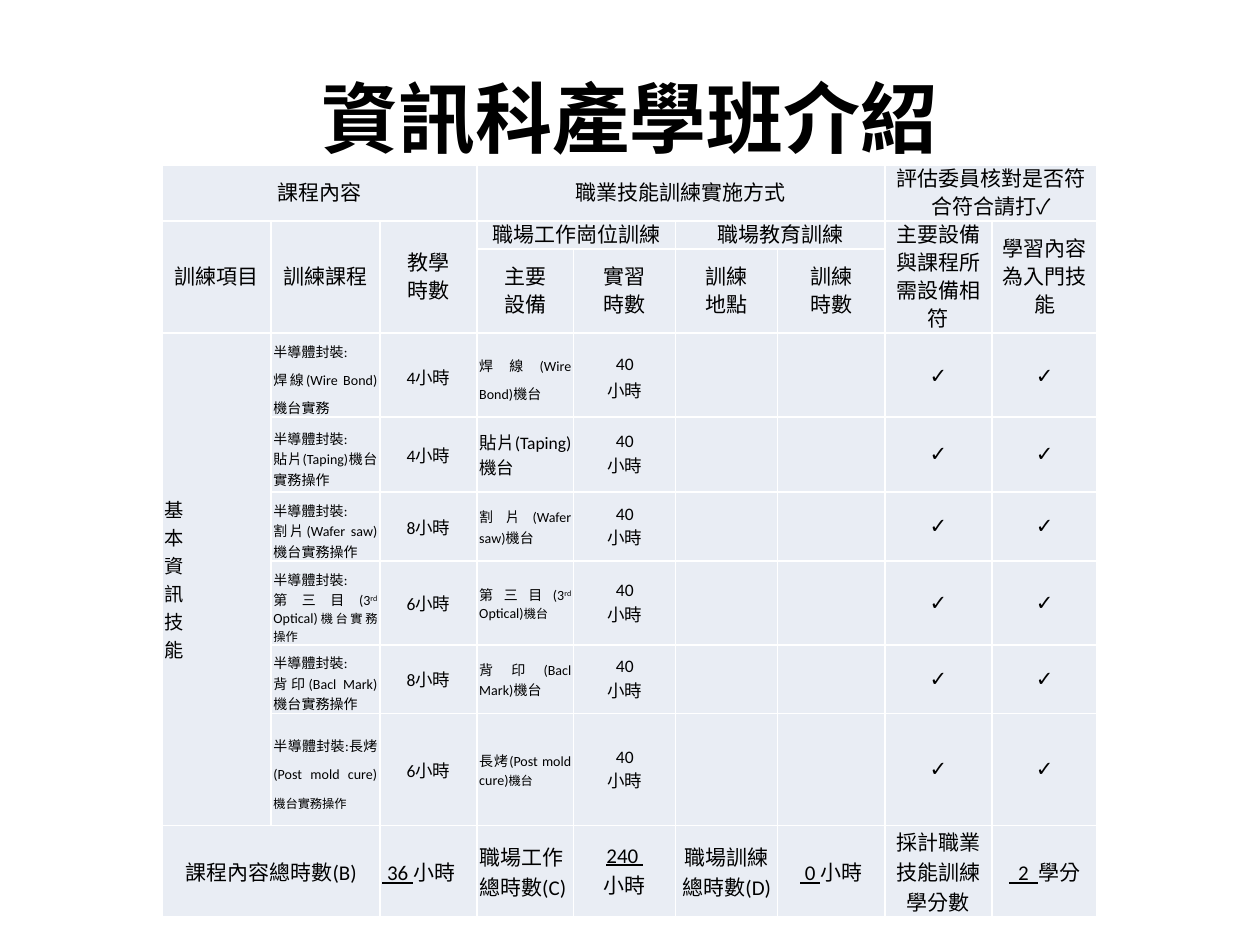
from dataclasses import dataclass
from typing import Optional

from lxml import etree
from pptx import Presentation
from pptx.dml.color import RGBColor
from pptx.enum.text import MSO_ANCHOR, PP_ALIGN
from pptx.oxml.ns import qn
from pptx.util import Pt

CENTER, LEFT, JUSTIFY = PP_ALIGN.CENTER, PP_ALIGN.LEFT, PP_ALIGN.JUSTIFY
MIDDLE = MSO_ANCHOR.MIDDLE
FONT = "Calibri"
BLACK, WHITE, PALE = "000000", "FFFFFF", "E9EDF4"
LEADING = 16
COLUMN_WIDTHS = [62, 62.2, 55.4, 55.4, 58.3, 58.3, 61.2, 61.2, 60.2]
ROW_HEIGHTS = [31.4, 16, 48, 48, 43, 39.4, 47.8, 39.4, 64, 52]
FIRST_COURSE_ROW = 3
TOTAL_ROW = 9


@dataclass
class Span:
    text: str
    size: float = 12
    bold: bool = False
    underline: bool = False
    raised: bool = False


@dataclass
class Line:
    spans: list[Span]
    align: PP_ALIGN = CENTER
    leading: Optional[float] = None


@dataclass
class Header:
    row: int
    column: int
    texts: list[str]
    rows: int = 1
    columns: int = 1


@dataclass
class Course:
    titles: list[list[Span]]
    hours: int
    equipment: list[Span]
    leading: Optional[float] = None


HEADERS = [
    Header(0, 0, ["課程內容"], columns=3),
    Header(0, 3, ["職業技能訓練實施方式"], columns=4),
    Header(0, 7, ["評估委員核對是否符合符合請打✓"], columns=2),
    Header(1, 0, ["訓練項目"], rows=2),
    Header(1, 1, ["訓練課程"], rows=2),
    Header(1, 2, ["教學", "時數"], rows=2),
    Header(1, 3, ["職場工作崗位訓練"], columns=2),
    Header(1, 5, ["職場教育訓練"], columns=2),
    Header(1, 7, ["主要設備與課程所需設備相符"], rows=2),
    Header(1, 8, ["學習內容為入門技能"], rows=2),
    Header(2, 3, ["主要", "設備"]),
    Header(2, 4, ["實習", "時數"]),
    Header(2, 5, ["訓練", "地點"]),
    Header(2, 6, ["訓練", "時數"]),
]

PACKAGING = [Span("半導體封裝:", 8)]
OPTICAL = [Span("第三目(3", 8), Span("rd", 8, raised=True), Span(" Optical)", 8)]
COURSES = [
    Course([PACKAGING, [Span("焊線(Wire Bond)機台實務", 8)]], 4,
           [Span("焊線(Wire Bond)機台", 8)], LEADING),
    Course([PACKAGING, [Span("貼片(Taping)機台實務操作", 8)]], 4,
           [Span("貼片(Taping)機台", 10)]),
    Course([PACKAGING, [Span("割片(Wafer saw)機台實務操作", 8)]], 8,
           [Span("割片(Wafer saw)機台", 8)]),
    Course([PACKAGING, OPTICAL + [Span("機台實務操作", 7)]], 6,
           OPTICAL + [Span("機台", 7)]),
    Course([PACKAGING, [Span("背印(Bacl Mark)機台實務操作", 8)]], 8,
           [Span("背印(Bacl Mark)機台", 8)]),
    Course([[Span("半導體封裝:長烤(Post mold cure)", 8), Span("機台實務操作", 7)]], 6,
           [Span("長烤(Post mold cure)", 8), Span("機台", 7)]),
]

TOTALS = {
    0: Line([Span("課程內容總時數(B)")]),
    2: Line([Span(" 36 ", underline=True), Span("小時")], LEFT),
    3: Line([Span("職場工作總時數(C)")], LEFT),
    4: Line([Span("240 \n", underline=True), Span("小時")]),
    5: Line([Span("職場訓練總時數(D)")]),
    6: Line([Span(" 0 ", underline=True), Span("小時")]),
    7: Line([Span("採計職業技能訓練學分數")]),
    8: Line([Span("  2  ", underline=True), Span("學分")]),
}


def color(value: str) -> RGBColor:
    return RGBColor.from_string(value)


def add_text(para, text: str, *, size: float, bold: bool = False,
             underline: bool = False, raised: bool = False) -> None:
    for index, part in enumerate(text.split("\n")):
        if index:
            para.add_line_break()
        if not part:
            continue
        run = para.add_run()
        run.text = part
        run.font.name = FONT
        run.font.size = Pt(size)
        run.font.bold = bold
        run.font.underline = underline
        run.font.color.rgb = color(BLACK)
        properties = run._r.get_or_add_rPr()
        properties.set("lang", "zh-TW")
        if raised:
            properties.set("baseline", "30000")


def write_lines(frame, lines: list[Line]) -> None:
    for index, line in enumerate(lines):
        para = frame.add_paragraph() if index else frame.paragraphs[0]
        para.alignment = line.align
        if line.leading:
            para.line_spacing = Pt(line.leading)
        for span in line.spans:
            add_text(para, span.text, size=span.size, bold=span.bold,
                     underline=span.underline, raised=span.raised)


def style_cell(cell) -> None:
    cell.margin_left = cell.margin_right = Pt(1.4)
    cell.margin_top = cell.margin_bottom = Pt(0)
    cell.vertical_anchor = MIDDLE
    properties = cell._tc.get_or_add_tcPr()
    for side in ("a:lnL", "a:lnR", "a:lnT", "a:lnB"):
        border = etree.SubElement(properties, qn(side), w=str(Pt(1)))
        fill = etree.SubElement(border, qn("a:solidFill"))
        etree.SubElement(fill, qn("a:srgbClr"), val=WHITE)
    cell.fill.solid()
    cell.fill.fore_color.rgb = color(PALE)


def merge(table, row: int, column: int, rows: int, columns: int) -> None:
    table.cell(row, column).merge(table.cell(row + rows - 1, column + columns - 1))


def add_title(page) -> None:
    box = page.shapes.add_textbox(Pt(36), Pt(21.6), Pt(648), Pt(90))
    box.text_frame.word_wrap = True
    box.text_frame.vertical_anchor = MIDDLE
    write_lines(box.text_frame, [Line([Span("資訊科產學班介紹", 44, bold=True)])])


def add_schedule(page):
    table = page.shapes.add_table(
        len(ROW_HEIGHTS), len(COLUMN_WIDTHS), Pt(92.9), Pt(94.3),
        Pt(sum(COLUMN_WIDTHS)), Pt(sum(ROW_HEIGHTS))).table
    table.first_row = table.horz_banding = False
    for column, width in zip(table.columns, COLUMN_WIDTHS):
        column.width = Pt(width)
    for row, height in zip(table.rows, ROW_HEIGHTS):
        row.height = Pt(height)
    for cell in table.iter_cells():
        style_cell(cell)
    return table


def fill_headers(table) -> None:
    for header in HEADERS:
        if header.rows * header.columns > 1:
            merge(table, header.row, header.column, header.rows, header.columns)
        write_lines(table.cell(header.row, header.column).text_frame,
                    [Line([Span(text)], leading=LEADING) for text in header.texts])


def fill_courses(table) -> None:
    merge(table, FIRST_COURSE_ROW, 0, len(COURSES), 1)
    write_lines(table.cell(FIRST_COURSE_ROW, 0).text_frame,
                [Line([Span(letter, 11)], LEFT, LEADING) for letter in "基本資訊技能"])
    for row, course in enumerate(COURSES, FIRST_COURSE_ROW):
        titles = [Line(spans, JUSTIFY, course.leading if index else LEADING)
                  for index, spans in enumerate(course.titles)]
        check = Line([Span("✓")], leading=course.leading)
        contents = {
            1: titles,
            2: [Line([Span(f"{course.hours}小時", 10)], leading=course.leading)],
            3: [Line(course.equipment, JUSTIFY, course.leading)],
            4: [Line([Span("40\n小時", 10)], leading=course.leading)],
            7: [check],
            8: [check],
        }
        for column, lines in contents.items():
            write_lines(table.cell(row, column).text_frame, lines)


def fill_totals(table) -> None:
    merge(table, TOTAL_ROW, 0, 1, 2)
    for column, line in TOTALS.items():
        write_lines(table.cell(TOTAL_ROW, column).text_frame, [line])


def main() -> None:
    deck = Presentation()
    deck.slide_width, deck.slide_height = Pt(720), Pt(540)
    page = deck.slides.add_slide(deck.slide_layouts[6])
    add_title(page)
    table = add_schedule(page)
    fill_headers(table)
    fill_courses(table)
    fill_totals(table)
    deck.save("out.pptx")


if __name__ == "__main__":
    main()
